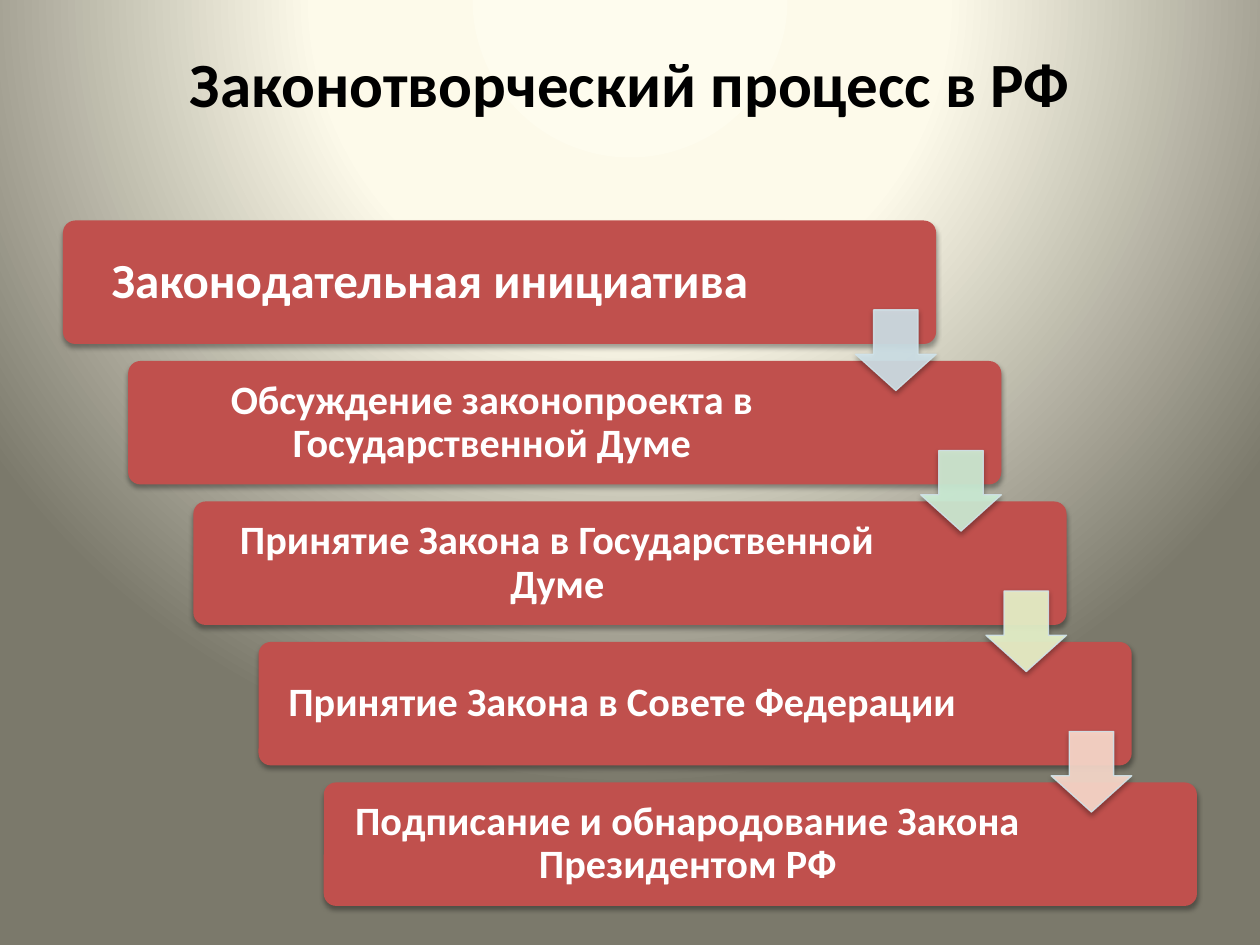
import dataclasses

import pptx
import pptx.dml.color
import pptx.enum.shapes
import pptx.enum.text
import pptx.oxml
import pptx.oxml.ns
import pptx.util

Inches = pptx.util.Inches
SHAPES = pptx.enum.shapes.MSO_SHAPE
ANCHOR = pptx.enum.text.MSO_ANCHOR


@dataclasses.dataclass(frozen=True)
class Theme:
    font: str = "Calibri"
    title_size: int = 36
    lead_size: int = 28
    step_size: int = 23
    title: str = "000000"
    bar: str = "C0504D"
    bar_text: str = "FFFFFF"
    arrow_line: str = "D0E3EA"
    arrows: tuple = ("D0E3EA", "CFF1D9", "EBF7CE", "FCDDCF")
    backdrop: tuple = ((0, "FEFCEE"), (40, "FDFAEA"), (100, "7B796B"))


THEME = Theme()
TITLE = "Законотворческий процесс в РФ"
STEPS = (
    "Законодательная инициатива",
    "Обсуждение законопроекта в Государственной Думе",
    "Принятие Закона в Государственной Думе",
    "Принятие Закона в Совете Федерации",
    "Подписание и обнародование Закона Президентом РФ",
)


def rgb(value):
    return pptx.dml.color.RGBColor.from_string(value)


def place(shape, box):
    shape.left, shape.top, shape.width, shape.height = map(Inches, box)


def write(frame, text, *, size, color, anchor=ANCHOR.MIDDLE, inset=0.1, spacing=1.0):
    """Put one bold centred paragraph into a text frame."""
    frame.word_wrap = True
    frame.auto_size = pptx.enum.text.MSO_AUTO_SIZE.NONE
    frame.vertical_anchor = anchor
    frame.margin_left = frame.margin_right = Inches(inset)
    frame.margin_top = frame.margin_bottom = Inches(inset)
    para = frame.paragraphs[0]
    para.alignment = pptx.enum.text.PP_ALIGN.CENTER
    para.line_spacing = spacing
    span = para.add_run()
    span.text = text
    span.font.name = THEME.font
    span.font.size = pptx.util.Pt(size)
    span.font.bold = True
    span.font.color.rgb = rgb(color)


def add_child(parent, tag, **attributes):
    child = pptx.oxml.parse_xml(f"<a:{tag} {pptx.oxml.ns.nsdecls('a')}/>")
    for name, value in attributes.items():
        child.set(name, str(value))
    parent.append(child)
    return child


def paint_backdrop(page):
    """Radial gradient centred above the page."""
    page.background.fill.gradient()
    gradient = page.element.xpath(".//p:bgPr/a:gradFill")[0]
    for child in list(gradient):
        gradient.remove(child)
    stops = add_child(gradient, "gsLst")
    for percent, color in THEME.backdrop:
        stop = add_child(stops, "gs", pos=percent * 1000)
        add_child(stop, "srgbClr", val=color)
    circle = add_child(gradient, "path", path="circle")
    add_child(circle, "fillToRect", l=50000, t=-80000, r=50000, b=180000)


def add_shadow(shape):
    shape.shadow.inherit = False
    effects = shape.element.spPr.find(pptx.oxml.ns.qn("a:effectLst"))
    shadow = add_child(effects, "outerShdw", blurRad=pptx.util.Pt(3.1),
                       dist=pptx.util.Pt(1.8), dir=5400000, rotWithShape=0)
    add_child(add_child(shadow, "srgbClr", val="000000"), "alpha", val=35000)


def add_title(page, box):
    title = page.shapes.title
    place(title, box)
    write(title.text_frame, TITLE, size=THEME.title_size, color=THEME.title,
          anchor=ANCHOR.TOP, inset=0.05)


def add_bar(group, box, text, text_width, size, inset):
    left, top, width, height = box
    bar = group.shapes.add_shape(SHAPES.ROUNDED_RECTANGLE, *map(Inches, box))
    bar.adjustments[0] = 0.1
    bar.fill.solid()
    bar.fill.fore_color.rgb = rgb(THEME.bar)
    bar.line.fill.background()
    add_shadow(bar)
    label = group.shapes.add_textbox(*map(Inches, (left, top, text_width, height)))
    write(label.text_frame, text, size=size, color=THEME.bar_text,
          inset=inset, spacing=0.9)


def add_arrow(group, box, color):
    arrow = group.shapes.add_shape(SHAPES.DOWN_ARROW, *map(Inches, box))
    arrow.adjustments[0] = 0.55
    arrow.adjustments[1] = 0.45
    arrow.fill.solid()
    arrow.fill.fore_color.rgb = rgb(color)
    arrow.line.color.rgb = rgb(THEME.arrow_line)
    arrow.line.width = pptx.util.Pt(0.75)
    # Fill and line are both slightly transparent
    for tone in arrow.element.spPr.xpath(".//a:srgbClr"):
        add_child(tone, "alpha", val=90000)
    add_shadow(arrow)


def add_staircase(page, box):
    """Bars stepping down to the right, an arrow across each gap."""
    left, top, width, height = box
    bar_width, bar_height, arrow_size = 6.93, 0.98, 0.64
    gaps = len(STEPS) - 1
    step_x = (width - bar_width) / gaps
    step_y = (height - bar_height) / gaps
    group = page.shapes.add_group_shape()

    for index, text in enumerate(STEPS):
        lead = index == 0
        add_bar(group, (left + index * step_x, top + index * step_y, bar_width, bar_height),
                text, text_width=5.82 if lead else 5.78,
                size=THEME.lead_size if lead else THEME.step_size,
                inset=0.12 if lead else 0.1)

    # Each arrow ends flush with the right edge of its upper bar
    for index, color in enumerate(THEME.arrows):
        arrow_left = left + index * step_x + bar_width - arrow_size
        arrow_top = top + index * step_y + 0.71
        add_arrow(group, (arrow_left, arrow_top, arrow_size, arrow_size), color)


def main():
    deck = pptx.Presentation()
    deck.slide_width, deck.slide_height = Inches(10), Inches(7.5)
    page = deck.slides.add_slide(deck.slide_layouts.get_by_name("Title Only"))
    paint_backdrop(page)
    add_title(page, (0.31, 0.3, 9.38, 1.25))
    add_staircase(page, (0.5, 1.75, 9, 5.44))
    deck.save("out.pptx")


if __name__ == "__main__":
    main()
